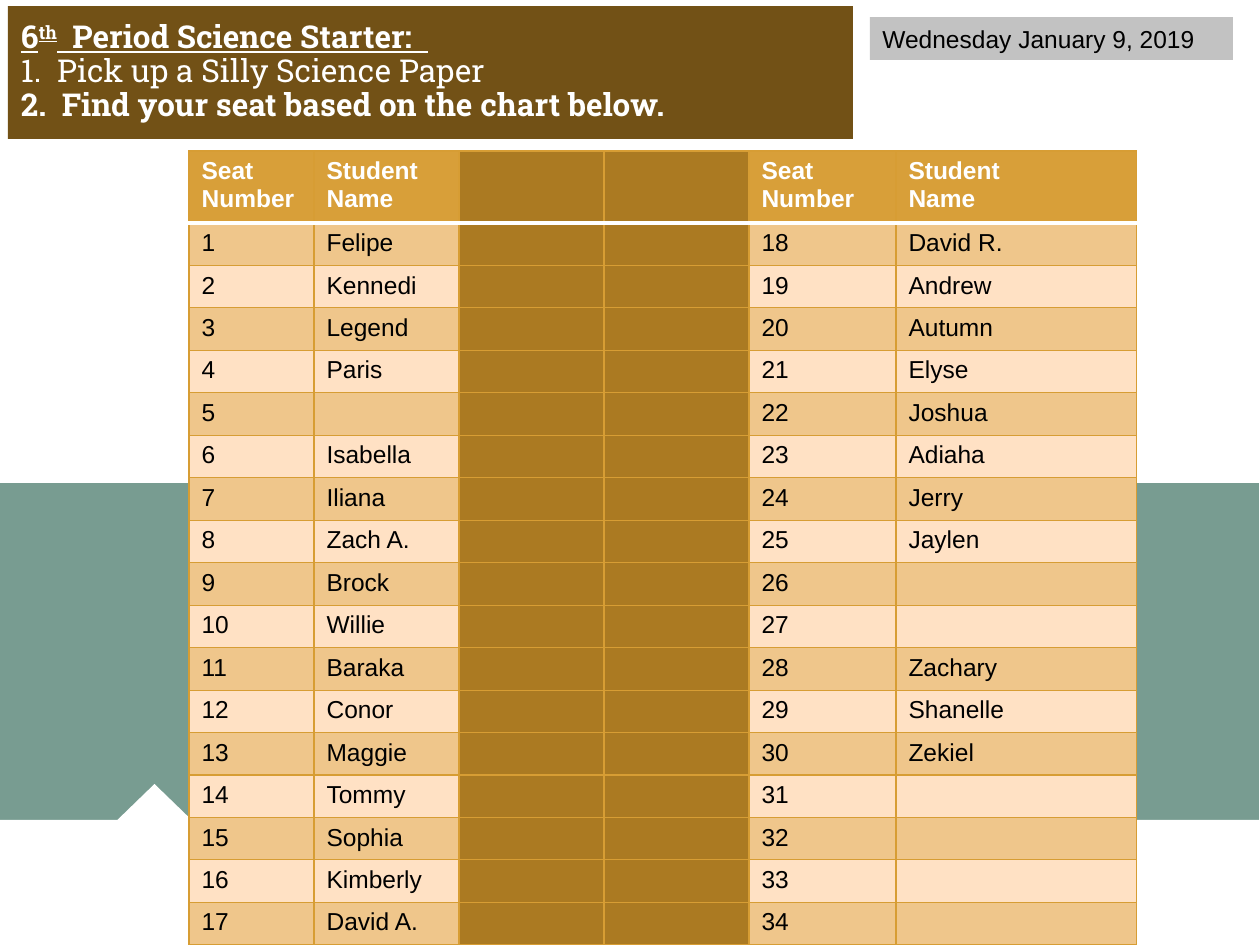
from itertools import zip_longest

from lxml.etree import SubElement
from pptx import Presentation
from pptx.dml.color import RGBColor
from pptx.enum.shapes import MSO_SHAPE
from pptx.enum.text import MSO_ANCHOR, MSO_AUTO_SIZE, PP_ALIGN
from pptx.oxml.ns import qn
from pptx.util import Emu, Pt

PX_PER_INCH = 126
COLORS = {
    "white": "FFFFFF", "black": "000000", "green": "004430", "brown": "725116",
    "gray": "C2C2C2", "gold": "D89F39", "aisle": "AB7A22", "border": "D79D34",
    "dark_band": "EFC68B", "light_band": "FFE1C4",
}
COLUMNS = [125, 145, 145, 145, 147, 241]
AISLE = (2, 3)
HEADER_HEIGHT, ROW_HEIGHT = 72, 42
HEADER = ["Seat Number", "Student\nName", "", "", "Seat\nNumber", "Student\nName"]
LEFT_NAMES = ["Felipe", "Kennedi", "Legend", "Paris", "", "Isabella", "Iliana", "Zach A.",
              "Brock", "Willie", "Baraka", "Conor", "Maggie", "Tommy", "Sophia",
              "Kimberly", "David A."]
RIGHT_NAMES = ["David R.", "Andrew", "Autumn", "Elyse", "Joshua", "Adiaha", "Jerry",
               "Jaylen", "", "", "Zachary", "Shanelle", "Zekiel"]


def px(length):
    return Emu(round(length * 914400 / PX_PER_INCH))


def color(name):
    return RGBColor.from_string(COLORS[name])


class SeatingPage:
    def __init__(self, deck):
        self.page = deck.slides.add_slide(deck.slide_layouts[5])

    def style(self, font, name, size, tint, bold=False, underline=False):
        font.name, font.size = name, Pt(size)
        font.bold, font.underline = bold, underline
        font.color.rgb = color(tint)

    def place(self, shape, left, top, width, height):
        shape.left, shape.top = px(left), px(top)
        shape.width, shape.height = px(width), px(height)

    def shape(self, kind, bounds, fill, opacity=None):
        shape = self.page.shapes.add_shape(kind, *map(px, bounds))
        shape.shadow.inherit = False
        shape.fill.solid()
        shape.fill.fore_color.rgb = color(fill)
        shape.line.fill.background()
        if opacity:
            tint = shape.fill._xPr.find(".//" + qn("a:srgbClr"))
            SubElement(tint, qn("a:alpha"), val=str(opacity * 1000))
        return shape

    def title(self, bounds, lines):
        """Each line is a list of (text, bold, underline, superscript) spans."""
        box = self.page.shapes.title
        self.place(box, *bounds)
        box.fill.solid()
        box.fill.fore_color.rgb = color("brown")
        frame = box.text_frame
        frame.auto_size = MSO_AUTO_SIZE.NONE
        frame.word_wrap = True
        frame.vertical_anchor = MSO_ANCHOR.MIDDLE
        frame.margin_left = frame.margin_right = px(13)
        frame.margin_top = frame.margin_bottom = px(13)
        para = frame.paragraphs[0]
        para.alignment = PP_ALIGN.LEFT
        para.line_spacing = 0.9
        for index, line in enumerate(lines):
            if index:
                para.add_line_break()
            for text, bold, underline, superscript in line:
                span = para.add_run()
                span.text = text
                self.style(span.font, "Roboto Slab", 18, "white", bold, underline)
                if superscript:
                    span.font._element.set("baseline", "30000")

    def label(self, bounds, text, fill):
        box = self.shape(MSO_SHAPE.RECTANGLE, bounds, fill)
        frame = box.text_frame
        frame.word_wrap = True
        frame.text = text
        para = frame.paragraphs[0]
        para.alignment = PP_ALIGN.LEFT
        self.style(para.runs[0].font, "Arial", 14, "black")

    def borders(self, cell, top, bottom):
        props = cell._tc.get_or_add_tcPr()
        edges = {"L": ("border", 0.75), "R": ("border", 0.75), "T": top, "B": bottom}
        for side, (tint, width) in edges.items():
            line = SubElement(props, qn(f"a:ln{side}"), w=str(Pt(width)))
            fill = SubElement(line, qn("a:solidFill"))
            SubElement(fill, qn("a:srgbClr"), val=COLORS[tint])

    def cell(self, cell, text, fill, tint, bold):
        cell.fill.solid()
        cell.fill.fore_color.rgb = color(fill)
        cell.text = text
        for para in cell.text_frame.paragraphs:
            for span in para.runs:
                self.style(span.font, "Arial", 14, tint, bold)
            if not para.runs:
                SubElement(para._p, qn("a:endParaRPr"), sz="1400")

    def table(self, left, top, rows):
        heights = [HEADER_HEIGHT] + [ROW_HEIGHT] * (len(rows) - 1)
        frame = self.page.shapes.add_table(len(rows), len(COLUMNS), px(left), px(top),
                                           px(sum(COLUMNS)), px(sum(heights)))
        table = frame.table
        table.horz_banding = False
        for column, width in zip(table.columns, COLUMNS):
            column.width = px(width)
        thin, thick = ("border", 0.75), ("white", 2)
        for number, texts in enumerate(rows):
            table.rows[number].height = px(heights[number])
            header = number == 0
            band = "gold" if header else "dark_band" if number % 2 else "light_band"
            for index, text in enumerate(texts):
                cell = table.cell(number, index)
                self.borders(cell, thick if number == 1 else thin, thick if header else thin)
                self.cell(cell, text, "aisle" if index in AISLE else band,
                          "white" if header else "black", header)


def seat_rows():
    count = len(LEFT_NAMES)
    pairs = zip_longest(LEFT_NAMES, RIGHT_NAMES, fillvalue="")
    return [[str(seat), left, "", "", str(seat + count), right]
            for seat, (left, right) in enumerate(pairs, 1)]


def main():
    deck = Presentation()
    deck.slide_width, deck.slide_height = px(1260), px(945)
    page = SeatingPage(deck)
    page.shape(MSO_SHAPE.RECTANGLE, (-1, 483, 1260, 346), "green", opacity=53)
    page.shape(MSO_SHAPE.RECTANGLE, (0, 820, 1268, 126), "white")
    page.shape(MSO_SHAPE.ISOSCELES_TRIANGLE, (106, 784, 97, 47), "white")
    page.title((8, 6, 845, 133), [
        [("6", True, True, False), ("th", True, True, True),
         ("  Period Science Starter:  ", True, True, False)],
        [("1.  Pick up a Silly Science Paper", False, False, False)],
        [("2.  Find your seat based on the chart below.", True, False, False)],
    ])
    page.label((870, 17, 363, 43), "Wednesday January 9, 2019", "gray")
    page.table(189, 151, [HEADER] + seat_rows())
    deck.save("out.pptx")


if __name__ == "__main__":
    main()
